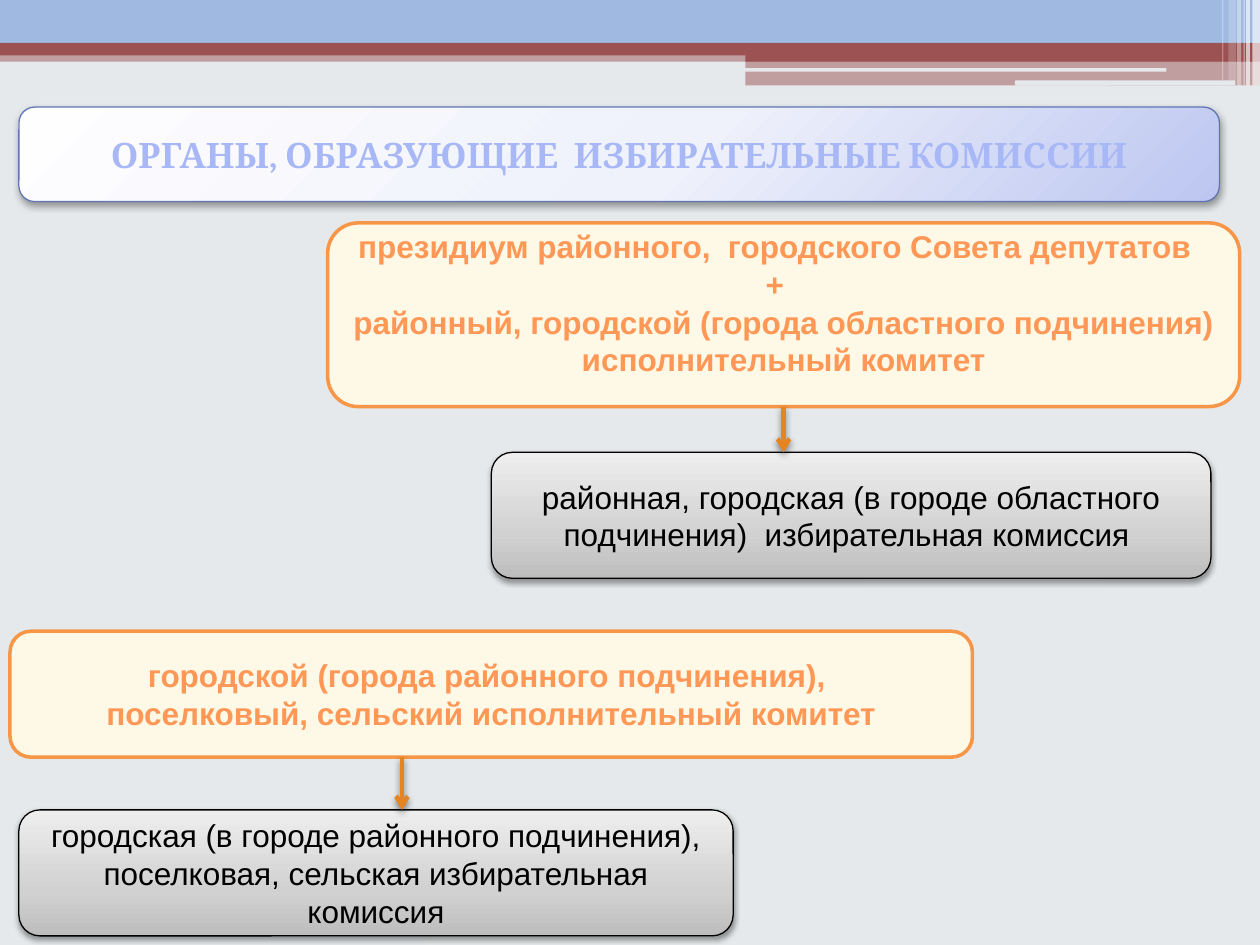
from lxml.etree import SubElement
from pptx import Presentation
from pptx.dml.color import RGBColor
from pptx.enum.shapes import MSO_CONNECTOR, MSO_SHAPE
from pptx.enum.text import MSO_ANCHOR, PP_ALIGN
from pptx.oxml.ns import qn
from pptx.util import Pt

GROUND = RGBColor(0xE5, 0xE9, 0xEB)
SKY = RGBColor(0x9F, 0xB9, 0xE1)
RED = RGBColor(0x9C, 0x52, 0x52)
WHITE = RGBColor(0xFF, 0xFF, 0xFF)
BLACK = RGBColor(0x00, 0x00, 0x00)
CREAM = RGBColor(0xFE, 0xF8, 0xE6)
ORANGE = RGBColor(0xF7, 0x96, 0x46)
PEACH = RGBColor(0xFF, 0x98, 0x56)
ARROW = RGBColor(0xE6, 0x84, 0x22)
BLUE = RGBColor(0x60, 0x76, 0xB4)
LILAC = RGBColor(0xA8, 0xB8, 0xF6)
GREYS = [(0, RGBColor(0xBD, 0xBD, 0xBD)), (35, RGBColor(0xD1, 0xD1, 0xD1)),
         (100, RGBColor(0xEE, 0xEE, 0xEE))]
BLUES = [(0, RGBColor(0xFE, 0xFE, 0xFF)), (55, RGBColor(0xEF, 0xF1, 0xFB)),
         (100, RGBColor(0xBC, 0xC6, 0xF1))]

# left, top, width, height, colour, opacity, shape
RECT, ROUND = MSO_SHAPE.RECTANGLE, MSO_SHAPE.ROUNDED_RECTANGLE
BANDS = [
    (0, 28.8, 720, 6.5, RED, 50, RECT),
    (0, 0, 720, 24.5, SKY, 100, RECT),
    (0, 24.5, 720, 7.2, RED, 100, RECT),
    (426, 28, 294, 7.2, RED, 100, RECT),
    (426, 34.5, 294, 14.4, RED, 50, RECT),
    (425.5, 38.9, 241, 2, GROUND, 100, ROUND),
    (580, 46, 126, 2.9, GROUND, 100, ROUND),
]
# left, width, height, opacity
STRIPES = [
    (715.7, 4.3, 49, 65), (712.1, 2.2, 49, 65), (710.6, 0.7, 49, 60),
    (707, 2.2, 49, 40), (702, 4.3, 46, 20), (698.4, 0.7, 46, 30),
]

MAKER = {"fill": CREAM, "line": ORANGE, "width": 2,
         "font": {"name": "Arial", "size": Pt(18), "bold": True}, "ink": PEACH}
BOARD = {"fill": GREYS, "turn": 270, "line": BLACK, "width": 0.75,
         "shade": (38, 3.1, 1.6),
         "font": {"name": "Arial", "size": Pt(18), "bold": False}, "ink": BLACK}
TITLE = {"fill": BLUES, "line": BLUE, "width": 0.75, "shade": (40, 4.1, 2),
         "font": {"name": "Cambria", "size": Pt(20), "bold": True}, "ink": LILAC}


def add(node, tag, **attrs):
    return SubElement(node, qn(tag), {k: str(v) for k, v in attrs.items()})


def shade(node, alpha, blur, dist):
    """Put a shadow that falls straight down into an effect list."""
    drop = add(node, "a:outerShdw", blurRad=Pt(blur), dist=Pt(dist),
               dir=90 * 60000, rotWithShape=0)
    tint = add(drop, "a:srgbClr", val=BLACK)
    add(tint, "a:alpha", val=alpha * 1000)


def blend(shape, stops, turn):
    """Fill with a gradient: linear at an angle, or round if turn is None."""
    shape.fill.gradient()
    grad = shape.element.spPr.find(qn("a:gradFill"))
    for child in list(grad):
        grad.remove(child)
    row = add(grad, "a:gsLst")
    for place, color in stops:
        add(add(row, "a:gs", pos=place * 1000), "a:srgbClr", val=color)
    if turn is None:
        round_ = add(grad, "a:path", path="circle")
        add(round_, "a:fillToRect", l=-40000, t=-90000, r=140000, b=190000)
    else:
        add(grad, "a:lin", ang=turn * 60000, scaled=0)


class Deck:
    def __init__(self):
        self.show = Presentation()
        self.show.slide_width, self.show.slide_height = Pt(720), Pt(540)
        self.slide = self.show.slides.add_slide(self.show.slide_layouts[6])
        fill = self.slide.background.fill
        fill.solid()
        fill.fore_color.rgb = GROUND

    def shape(self, kind, spot):
        shape = self.slide.shapes.add_shape(kind, *map(Pt, spot))
        shape.shadow.inherit = False
        return shape

    def band(self, spot, color, alpha, kind=RECT):
        band = self.shape(kind, spot)
        band.fill.solid()
        band.fill.fore_color.rgb = color
        band.line.fill.background()
        if alpha < 100:
            tint = band.element.spPr.find(qn("a:solidFill"))[0]
            add(tint, "a:alpha", val=alpha * 1000)

    def box(self, spot, style, *lines, foot=3.6):
        box = self.shape(ROUND, spot)
        if isinstance(style["fill"], list):
            blend(box, style["fill"], style.get("turn"))
        else:
            box.fill.solid()
            box.fill.fore_color.rgb = style["fill"]
        box.line.color.rgb = style["line"]
        box.line.width = Pt(style["width"])
        if "shade" in style:
            shade(box.element.spPr.find(qn("a:effectLst")), *style["shade"])
        self.text(box.text_frame, style, lines, foot)
        return box

    def text(self, frame, style, lines, foot):
        form = {"word_wrap": True, "vertical_anchor": MSO_ANCHOR.MIDDLE,
                "margin_bottom": Pt(foot)}
        for key, value in form.items():
            setattr(frame, key, value)
        for i, line in enumerate(lines):
            para = frame.add_paragraph() if i else frame.paragraphs[0]
            para.alignment = PP_ALIGN.CENTER
            run = para.add_run()
            run.text = line
            for key, value in style["font"].items():
                setattr(run.font, key, value)
            run.font.color.rgb = style["ink"]

    def arrow(self, x, top, end, start=None):
        line = self.slide.shapes.add_connector(
            MSO_CONNECTOR.STRAIGHT, Pt(x), Pt(top), Pt(x), Pt(end))
        if start is not None:
            line.begin_connect(start, 2)
        line.line.color.rgb = ARROW
        line.line.width = Pt(2.5)
        props = line.element.spPr
        add(props.find(qn("a:ln")), "a:tailEnd", type="arrow")
        shade(add(props, "a:effectLst"), 45, 4, 2)


def main():
    deck = Deck()
    for *spot, color, alpha, kind in BANDS:
        deck.band(spot, color, alpha, kind)
    for left, width, height, alpha in STRIPES:
        deck.band((left, 0, width, height), WHITE, alpha)

    council = deck.box(
        (187.2, 127.4, 521.2, 105), MAKER,
        "президиум районного,  городского Совета депутатов  ", "+  ",
        "районный, городской (города областного подчинения) "
        "исполнительный комитет", foot=17.5)
    deck.box((280.8, 258.5, 411.2, 72), BOARD,
             "районная, городская (в городе областного подчинения)  "
             "избирательная комиссия ")
    deck.box((5.7, 360.7, 550, 72), MAKER,
             "городской (города районного подчинения), ",
             "поселковый, сельский исполнительный комитет")
    deck.box((10.8, 462.8, 408.2, 72), BOARD,
             "городская (в городе районного подчинения), поселковая, "
             "сельская избирательная комиссия")
    deck.arrow(447.8, 232.4, 258.5, council)
    deck.arrow(229.7, 432.7, 462.8)
    deck.box((10.8, 61.2, 686, 54), TITLE,
             "ОРГАНЫ, ОБРАЗУЮЩИЕ  ИЗБИРАТЕЛЬНЫЕ КОМИССИИ")
    deck.show.save("out.pptx")


if __name__ == "__main__":
    main()
